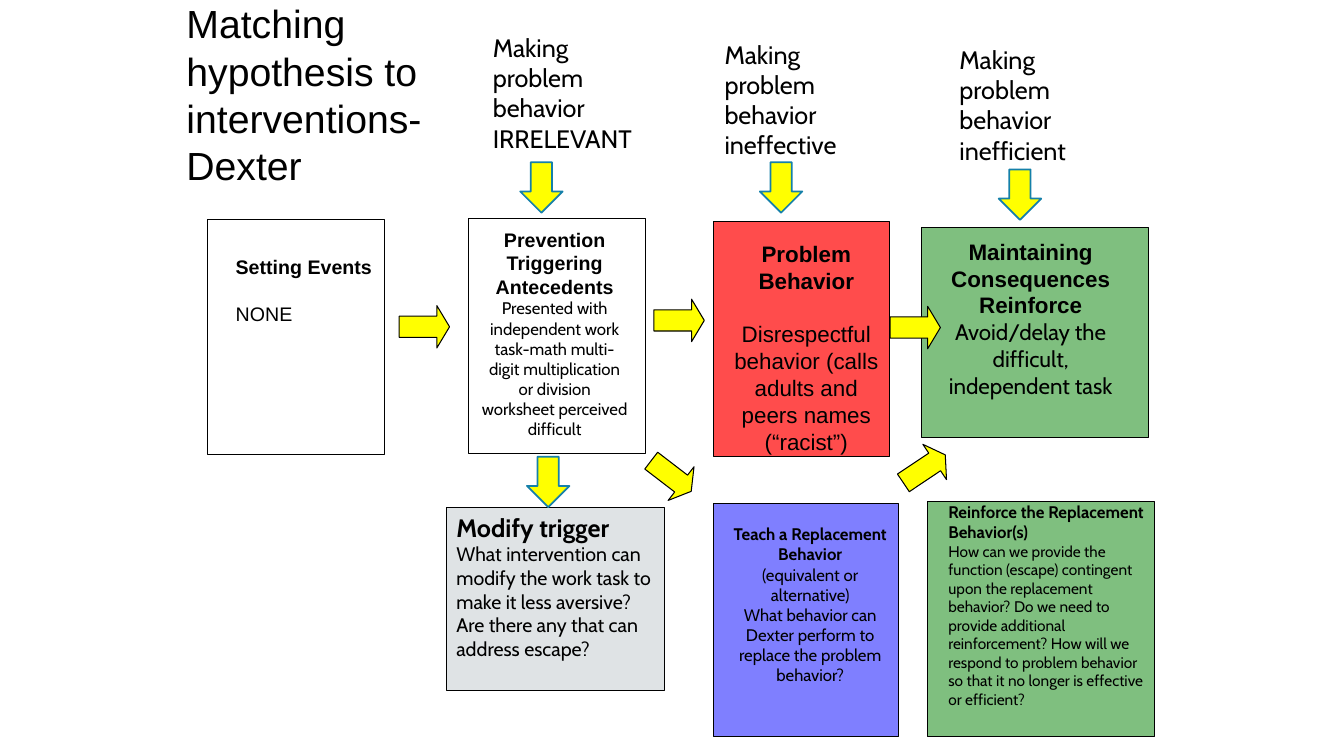
"""Build the slide that matches Dexter's hypothesis to interventions."""
from dataclasses import dataclass

from lxml import etree
from pptx import Presentation
from pptx.dml.color import RGBColor
from pptx.enum.shapes import MSO_SHAPE as SHAPE
from pptx.enum.text import MSO_ANCHOR as ANCHOR, MSO_AUTO_SIZE as FIT, PP_ALIGN as ALIGN
from pptx.oxml.ns import qn
from pptx.util import Cm, Pt


@dataclass(frozen=True)
class Theme:
    black: str = "000000"
    red: str = "FF0000"
    green: str = "008000"
    blue: str = "0000FF"
    grey: str = "DFE3E5"
    yellow: str = "FFFF00"
    teal: str = "1580A9"
    plain: str = "Arial"
    round: str = "Cabin"
    title: int = 28
    large: int = 18
    heading: int = 16
    body: int = 14
    small: int = 12
    tiny: int = 11
    line: float = 0.75
    bold_line: float = 1.25


THEME = Theme()

PANELS = [
    ((5.23, 5.54, 4.45, 5.92), None, 100),
    ((11.81, 5.51, 4.45, 5.92), None, 100),
    ((17.98, 5.59, 4.45, 5.92), THEME.red, 70),
    ((23.22, 5.74, 5.72, 5.28), THEME.green, 50),
    ((11.25, 12.78, 5.51, 4.62), THEME.grey, 100),
    ((17.98, 12.7, 4.67, 5.87), THEME.blue, 50),
    ((23.37, 12.65, 5.72, 5.92), THEME.green, 50),
]

RIGHT_ARROWS = [
    (10.06, 7.7, 0), (22.43, 7.72, 0), (16.48, 7.54, 0),
    (16.28, 11.46, 37.5), (22.66, 11.28, 326.2),
]
DOWN_ARROWS = [(13.28, 11.51), (13.11, 4.09), (19.15, 4.09), (25.17, 4.27)]
ARROW_LENGTH, ARROW_WIDTH = 1.27, 1.07

STRATEGIES = [
    ((12.17, 0.69, 4.34, 3.33), "IRRELEVANT"),
    ((18.01, 0.86, 4.01, 3.33), "ineffective"),
    ((23.93, 0.99, 4.01, 3.33), "inefficient"),
]

# fmt: off
TEXTS = [
    ((4.45, -0.13, 6.78, 5.05), ALIGN.LEFT, [
        ("Matching hypothesis to interventions-Dexter", THEME.title, THEME.plain, False, 0)]),
    ((5.69, 6.3, 3.96, 2.06), ALIGN.LEFT, [
        ("Setting Events", THEME.body, THEME.plain, True, 0),
        ("NONE", THEME.body, THEME.plain, False, 17)]),
    ((11.86, 5.61, 4.24, 5.64), ALIGN.CENTER, [
        ("Prevention Triggering", THEME.body, THEME.plain, True, 0),
        ("Antecedents", THEME.body, THEME.plain, True, 0),
        ("Presented with independent work task-math multi-digit multiplication or division "
         "worksheet perceived difficult", THEME.small, THEME.round, False, 0)]),
    ((18.21, 5.92, 4.22, 5.74), ALIGN.CENTER, [
        ("Problem", THEME.heading, THEME.plain, True, 0),
        ("Behavior", THEME.heading, THEME.plain, True, 0),
        ("Disrespectful behavior (calls adults and peers names (“racist”)",
         THEME.heading, THEME.plain, False, 19)]),
    ((23.65, 5.87, 4.65, 5.05), ALIGN.CENTER, [
        ("Maintaining", THEME.heading, THEME.plain, True, 0),
        ("Consequences Reinforce", THEME.heading, THEME.plain, True, 0),
        ("Avoid/delay the difficult, independent task", THEME.heading, THEME.round, False, 0)]),
    ((11.25, 12.78, 5.51, 4.62), ALIGN.LEFT, [
        ("Modify trigger", THEME.large, THEME.round, True, 0),
        ("What intervention can modify the work task to make it less aversive? "
         "Are there any that can address escape?", THEME.body, THEME.round, False, 0)]),
    ((17.98, 13.08, 4.88, 4.88), ALIGN.CENTER, [
        ("Teach a Replacement Behavior", THEME.small, THEME.round, True, 0),
        ("(equivalent or alternative)", THEME.small, THEME.round, False, 0),
        ("What behavior can Dexter perform to replace the problem behavior?",
         THEME.small, THEME.round, False, 0)]),
    ((23.65, 12.52, 5.72, 5.99), ALIGN.LEFT, [
        ("Reinforce the Replacement Behavior(s)", THEME.small, THEME.round, True, 0),
        ("How can we provide the function (escape) contingent upon the replacement behavior? "
         "Do we need to provide additional reinforcement? How will we respond to problem "
         "behavior so that it no longer is effective or efficient?",
         THEME.tiny, THEME.round, False, 0)]),
] + [
    (place, ALIGN.LEFT, [(f"Making problem behavior {effect}", THEME.large, THEME.round, False, 0)])
    for place, effect in STRATEGIES
]


def add_outlined(page, kind, place, fill, line, width, opacity=100):
    shape = page.shapes.add_shape(kind, *map(Cm, place))
    shape.shadow.inherit = False
    shape.line.color.rgb = RGBColor.from_string(line)
    shape.line.width = Pt(width)
    if fill is None:
        shape.fill.background()
        return shape
    shape.fill.solid()
    shape.fill.fore_color.rgb = RGBColor.from_string(fill)
    if opacity < 100:
        color = shape.fill._xPr.find(f"{qn('a:solidFill')}/{qn('a:srgbClr')}")
        etree.SubElement(color, qn("a:alpha"), val=str(opacity * 1000))
    return shape


def add_text(page, place, align, paragraphs):
    frame = page.shapes.add_textbox(*map(Cm, place)).text_frame
    frame.word_wrap = True
    frame.auto_size = FIT.NONE
    frame.vertical_anchor = ANCHOR.TOP
    for index, (words, size, face, bold, gap) in enumerate(paragraphs):
        para = frame.add_paragraph() if index else frame.paragraphs[0]
        para.text = words
        para.alignment = align
        para.space_before = Pt(gap)
        para.font.name = face
        para.font.size = Pt(size)
        para.font.bold = bold
        para.font.color.rgb = RGBColor.from_string(THEME.black)


def main():
    deck = Presentation()
    deck.slide_width, deck.slide_height = Cm(33.87), Cm(19.05)
    page = deck.slides.add_slide(deck.slide_layouts[6])
    for place, fill, opacity in PANELS:
        add_outlined(page, SHAPE.RECTANGLE, place, fill, THEME.black, THEME.line, opacity)
    for left, top, angle in RIGHT_ARROWS:
        place = (left, top, ARROW_LENGTH, ARROW_WIDTH)
        arrow = add_outlined(page, SHAPE.RIGHT_ARROW, place, THEME.yellow, THEME.black, THEME.line)
        arrow.adjustments[1] = 0.3
        arrow.rotation = angle
    for left, top in DOWN_ARROWS:
        place = (left, top, ARROW_WIDTH, ARROW_LENGTH)
        add_outlined(page, SHAPE.DOWN_ARROW, place, THEME.yellow, THEME.teal, THEME.bold_line)
    for place, align, paragraphs in TEXTS:
        add_text(page, place, align, paragraphs)
    deck.save("out.pptx")


if __name__ == "__main__":
    main()
